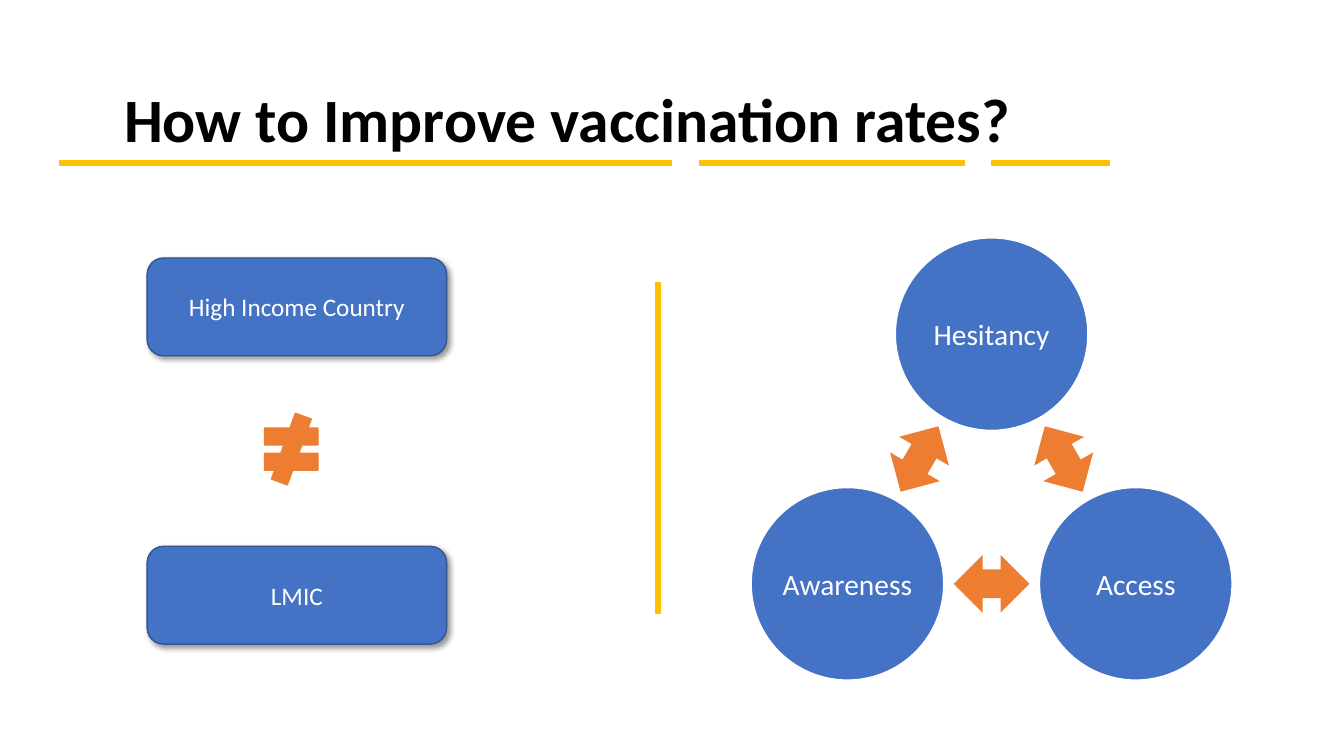
from math import cos, radians, sin, sqrt

from lxml.etree import SubElement
from pptx import Presentation
from pptx.dml.color import RGBColor
from pptx.enum.shapes import MSO_SHAPE
from pptx.enum.text import MSO_ANCHOR, PP_ALIGN
from pptx.oxml.ns import qn
from pptx.util import Inches, Pt

COLORS = {
    "black": "000000",
    "white": "FFFFFF",
    "blue": "4472C4",
    "dark_blue": "325491",
    "orange": "ED7D31",
    "gold": "FFC000",
}
FONT = "Calibri"


def color(name):
    return RGBColor.from_string(COLORS[name])


def add_filled_shape(slide, kind, left, top, width, height, fill, line=None):
    shape = slide.shapes.add_shape(
        kind, Inches(left), Inches(top), Inches(width), Inches(height))
    shape.shadow.inherit = False
    shape.fill.solid()
    shape.fill.fore_color.rgb = color(fill)
    if line:
        shape.line.color.rgb = color(line)
        shape.line.width = Pt(1)
    else:
        shape.line.fill.background()
    return shape


def format_text(shape, text, size, font_color, alignment, bold=False):
    shape.text_frame.text = text
    paragraph = shape.text_frame.paragraphs[0]
    paragraph.alignment = alignment
    paragraph.line_spacing = 1.0
    paragraph.font.name = FONT
    paragraph.font.size = Pt(size)
    paragraph.font.bold = bold
    paragraph.font.color.rgb = color(font_color)


def add_label(shape, text, size):
    shape.text_frame.vertical_anchor = MSO_ANCHOR.MIDDLE
    format_text(shape, text, size, "white", PP_ALIGN.CENTER)


def add_drop_shadow(shape):
    effects = shape._element.spPr.find(qn("a:effectLst"))
    shadow = SubElement(
        effects, qn("a:outerShdw"), blurRad=str(Pt(4)), dist=str(Pt(3)),
        dir=str(45 * 60000), algn="tl", rotWithShape="0")
    shade = SubElement(shadow, qn("a:srgbClr"), val=COLORS["black"])
    SubElement(shade, qn("a:alpha"), val="40000")


def add_title(slide, left, top, width, height):
    title = slide.shapes.title
    title.left, title.top = Inches(left), Inches(top)
    title.width, title.height = Inches(width), Inches(height)
    title.text_frame.vertical_anchor = MSO_ANCHOR.TOP
    format_text(title, "How to Improve vaccination rates?", 44, "black",
                PP_ALIGN.LEFT, bold=True)


def add_title_rule(slide, left, top, height):
    gap = 0.28
    for width in (6.07, 2.62, 1.16):
        add_filled_shape(slide, MSO_SHAPE.RECTANGLE, left, top, width, height,
                         "gold", "gold")
        left += width + gap


def add_country_comparison(slide, left, top, width, height):
    box_height = 0.97
    box_tops = (top, top + height - box_height)
    for box_top, text in zip(box_tops, ("High Income Country", "LMIC")):
        box = add_filled_shape(slide, MSO_SHAPE.ROUNDED_RECTANGLE, left,
                               box_top, width, box_height, "blue", "dark_blue")
        add_drop_shadow(box)
        add_label(box, text, 18)
    add_filled_shape(slide, MSO_SHAPE.MATH_NOT_EQUAL, left + 1.07, top + 1.54,
                     0.72, 0.71, "orange", "orange")


def add_factor_cycle(slide, left, top, width, diameter):
    side = width - diameter
    radius = side / sqrt(3)
    center_x = left + width / 2
    center_y = top + diameter / 2 + radius
    arrow_width, arrow_height = 0.75, 0.57
    for index, text in enumerate(("Hesitancy", "Access", "Awareness")):
        angle = radians(120 * index - 90)
        circle = add_filled_shape(
            slide, MSO_SHAPE.OVAL,
            center_x + radius * cos(angle) - diameter / 2,
            center_y + radius * sin(angle) - diameter / 2,
            diameter, diameter, "blue", "white")
        add_label(circle, text, 21)
        circle.text_frame.word_wrap = False

        angle += radians(60)
        arrow = add_filled_shape(
            slide, MSO_SHAPE.LEFT_RIGHT_ARROW,
            center_x + radius / 2 * cos(angle) - arrow_width / 2,
            center_y + radius / 2 * sin(angle) - arrow_height / 2,
            arrow_width, arrow_height, "orange")
        arrow.rotation = 60 + 120 * index


def main():
    presentation = Presentation()
    presentation.slide_width = Inches(13.33)
    presentation.slide_height = Inches(7.5)
    slide = presentation.slides.add_slide(presentation.slide_layouts[5])
    add_title(slide, 1.13, 0.75, 9.59, 0.84)
    add_factor_cycle(slide, 7.45, 2.36, 4.77, 1.91)
    add_title_rule(slide, 0.59, 1.59, 0.05)
    add_country_comparison(slide, 1.46, 2.56, 2.97, 3.83)
    add_filled_shape(slide, MSO_SHAPE.RECTANGLE, 6.5, 2.8, 0.05, 3.28,
                     "gold", "gold")
    presentation.save("out.pptx")


if __name__ == "__main__":
    main()
